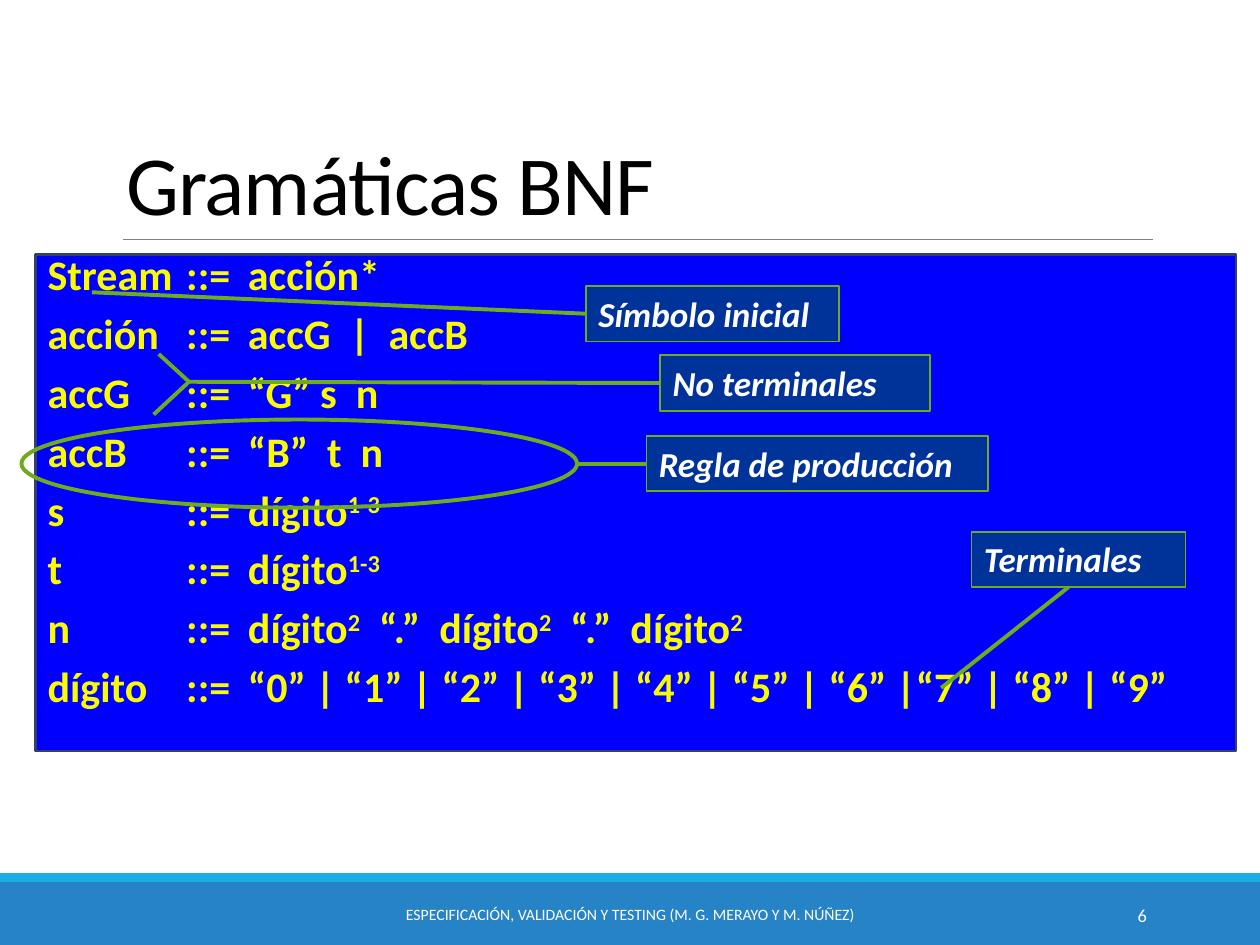
from dataclasses import dataclass

from lxml.etree import SubElement
from pptx import Presentation
from pptx.dml.color import RGBColor
from pptx.enum.shapes import MSO_CONNECTOR as Connector, MSO_SHAPE as Shape
from pptx.enum.text import MSO_ANCHOR as Anchor, MSO_AUTO_SIZE as AutoSize, PP_ALIGN as Align
from pptx.oxml.ns import qn
from pptx.util import Inches, Pt


@dataclass(frozen=True)
class Theme:
    font: str = "Calibri"
    black: str = "000000"
    white: str = "FFFFFF"
    band: str = "2683C6"
    band_edge: str = "1CADE4"
    rule: str = "808080"
    panel: str = "0000FF"
    panel_edge: str = "344068"
    grammar: str = "FAFD00"
    label: str = "003399"
    accent: str = "6EAC1C"
    title_size: float = 48
    grammar_size: float = 24
    label_size: float = 20
    footer_size: float = 9
    number_size: float = 10.5


TITLE_ONLY = 5
LEFT_SIDE = 1

# Symbol and expression; text between carets is superscript
GRAMMAR = [
    ("Stream", "acción*"),
    ("acción", "accG  |  accB"),
    ("accG", "“G” s  n"),
    ("accB", "“B”  t  n"),
    ("s", "dígito^1-3^"),
    ("t", "dígito^1-3^"),
    ("n", "dígito^2^  “.”  dígito^2^  “.”  dígito^2^"),
    ("dígito", "“0” | “1” | “2” | “3” | “4” | “5” | “6” |“7” | “8” | “9”"),
]


class SlideBuilder:
    def __init__(self, slide, theme):
        self.slide = slide
        self.theme = theme

    def style(self, paragraph, size, color, bold=False, italic=False):
        for run in paragraph.runs:
            font = run.font
            font.name, font.size = self.theme.font, Pt(size)
            font.bold, font.italic = bold, italic
            font.color.rgb = RGBColor.from_string(color)

    def title(self, text, box):
        title = self.slide.shapes.title
        title.left, title.top, title.width, title.height = map(Inches, box)
        frame = title.text_frame
        frame.text = text
        frame.auto_size = AutoSize.NONE
        frame.vertical_anchor = Anchor.BOTTOM
        paragraph = frame.paragraphs[0]
        paragraph.alignment = Align.LEFT
        paragraph.line_spacing = 0.85
        self.style(paragraph, self.theme.title_size, self.theme.black)
        for run in paragraph.runs:
            run.font._element.set("spc", "-50")

    def shape(self, kind, box, fill=None, line=None, width=1):
        shape = self.slide.shapes.add_shape(kind, *map(Inches, box))
        shape.shadow.inherit = False
        if fill:
            shape.fill.solid()
            shape.fill.fore_color.rgb = RGBColor.from_string(fill)
        else:
            shape.fill.background()
        if line:
            shape.line.color.rgb = RGBColor.from_string(line)
            shape.line.width = Pt(width)
        else:
            shape.line.fill.background()
        return shape

    def grammar(self, rules, box, tab_stops):
        theme = self.theme
        panel = self.shape(Shape.RECTANGLE, box, theme.panel, theme.panel_edge, 1.5)
        frame = panel.text_frame
        frame.vertical_anchor = Anchor.TOP
        frame.text = "\n".join(f"{symbol}\t::=\t" for symbol, _ in rules)
        for index, (paragraph, (_, expression)) in enumerate(zip(frame.paragraphs, rules)):
            for part, text in enumerate(expression.split("^")):
                if text:
                    run = paragraph.add_run()
                    run.text = text
                    if part % 2:
                        run.font._element.set("baseline", "30000")
            paragraph.alignment = Align.LEFT
            paragraph.line_spacing = 0.75
            paragraph.space_before = Pt(theme.grammar_size / 2 if index else 0)
            self.style(paragraph, theme.grammar_size, theme.grammar, bold=True)
            self.align_columns(paragraph, tab_stops)

    def align_columns(self, paragraph, tab_stops):
        tabs = SubElement(paragraph._p.get_or_add_pPr(), qn("a:tabLst"))
        for stop in tab_stops:
            SubElement(tabs, qn("a:tab"), pos=str(Inches(stop)), algn="l")

    def label(self, text, box):
        theme = self.theme
        label = self.shape(Shape.RECTANGLE, box, theme.label, theme.accent)
        frame = label.text_frame
        frame.text = text
        frame.vertical_anchor = Anchor.TOP
        paragraph = frame.paragraphs[0]
        paragraph.alignment = Align.LEFT
        self.style(paragraph, theme.label_size, theme.white, bold=True, italic=True)
        return label

    def line(self, start, end, color, width, label=None):
        line = self.slide.shapes.add_connector(
            Connector.STRAIGHT, *map(Inches, (*start, *end)))
        line.line.color.rgb = RGBColor.from_string(color)
        line.line.width = Pt(width)
        SubElement(line._element.spPr, qn("a:effectLst"))
        if label is not None:
            line.end_connect(label, LEFT_SIDE)

    def pointer(self, start, end, label=None):
        self.line(start, end, self.theme.accent, 2.25, label)

    def footer(self, text, box, size, alignment):
        frame = self.slide.shapes.add_textbox(*map(Inches, box)).text_frame
        frame.word_wrap = True
        frame.vertical_anchor = Anchor.MIDDLE
        frame.text = text
        frame.paragraphs[0].alignment = alignment
        self.style(frame.paragraphs[0], size, self.theme.white)


def main():
    theme = Theme()
    deck = Presentation()
    deck.slide_width, deck.slide_height = Inches(10), Inches(7.5)
    page = SlideBuilder(deck.slides.add_slide(deck.slide_layouts[TITLE_ONLY]), theme)

    # Bottom band and footer
    page.shape(Shape.RECTANGLE, (0, 7, 10, 0.5), theme.band)
    page.shape(Shape.RECTANGLE, (0, 6.93, 10, 0.07), theme.band_edge)
    page.footer("ESPECIFICACIÓN, VALIDACIÓN Y TESTING (M. G. MERAYO Y M. NÚÑEZ)",
                (3.02, 7.06, 3.96, 0.4), theme.footer_size, Align.CENTER)
    page.footer("6", (8.12, 7.06, 1.08, 0.4), theme.number_size, Align.RIGHT)

    # Title and its rule
    page.title("Gramáticas BNF", (0.9, 0.31, 8.3, 1.59))
    page.line((0.98, 1.9), (9.15, 1.9), theme.rule, 0.5)

    # Grammar panel
    page.grammar(GRAMMAR, (0.28, 2.02, 9.53, 3.94), tab_stops=(1.1, 1.59))

    # Non-terminals, with a fork to two symbols
    non_terminals = page.label("No terminales", (5.24, 2.82, 2.14, 0.44))
    fork = (1.5, 3.03)
    page.pointer(fork, (5.24, 3.03), non_terminals)
    for symbol_end in ((1.26, 2.81), (1.22, 3.29)):
        page.pointer(fork, symbol_end)

    # Terminals
    page.label("Terminales", (7.71, 4.22, 1.7, 0.44))
    page.pointer((7.47, 5.46), (8.48, 4.66))

    # Production rule, circled
    production = page.label("Regla de producción", (5.13, 3.46, 2.71, 0.44))
    page.shape(Shape.OVAL, (0.17, 3.33, 4.41, 0.7), line=theme.accent, width=2.25)
    page.pointer((4.58, 3.68), (5.13, 3.68), production)

    # Start symbol
    start_symbol = page.label("Símbolo inicial", (4.65, 2.27, 2.01, 0.44))
    page.pointer((0.73, 2.32), (4.65, 2.49), start_symbol)

    deck.save("out.pptx")


if __name__ == "__main__":
    main()
